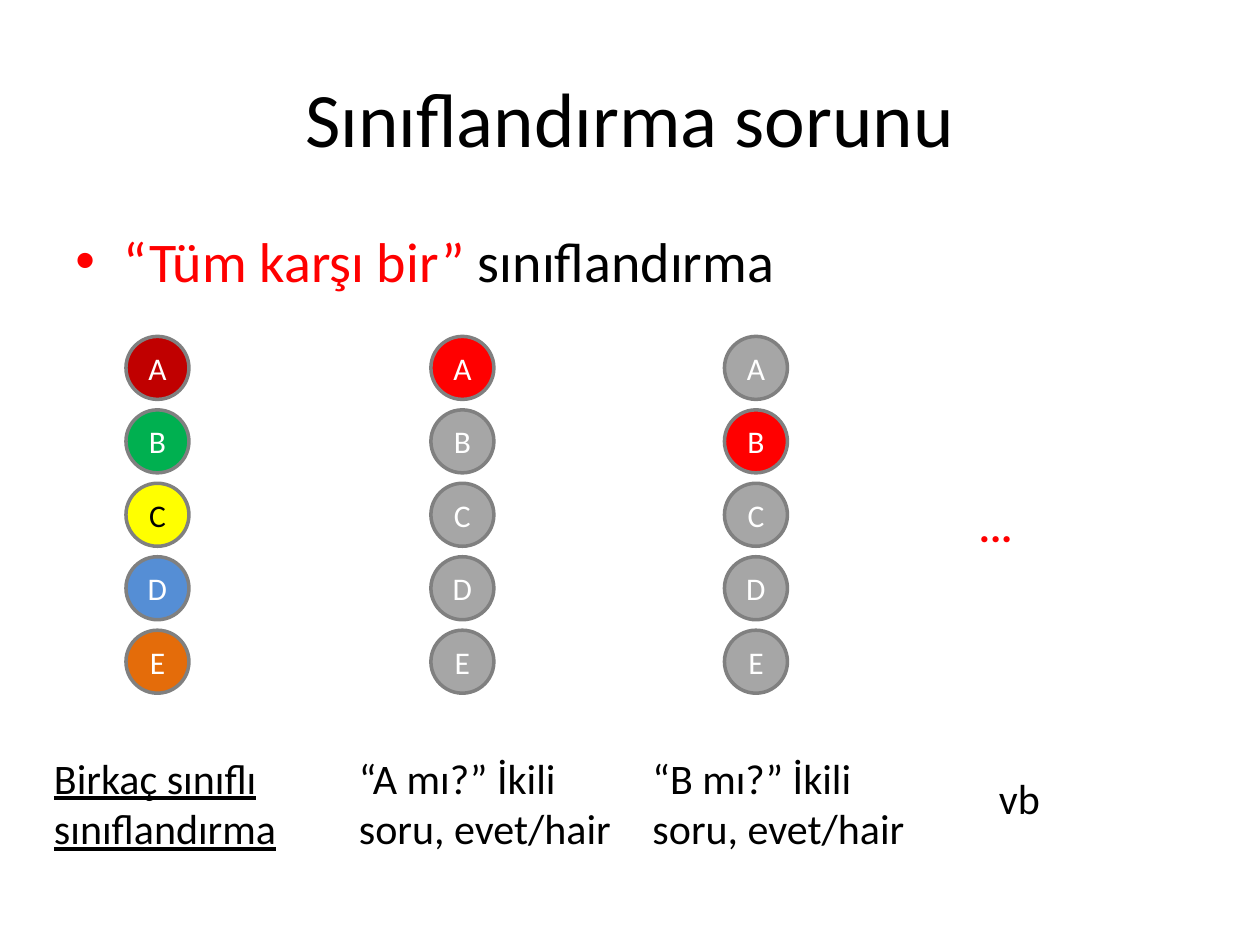
"""Build a slide showing one-versus-all classification."""
from lxml import etree
from pptx import Presentation
from pptx.dml.color import RGBColor
from pptx.enum.shapes import MSO_SHAPE
from pptx.enum.text import MSO_ANCHOR, PP_ALIGN
from pptx.oxml.ns import qn
from pptx.util import Inches, Pt

OVAL = MSO_SHAPE.OVAL
MIDDLE = MSO_ANCHOR.MIDDLE
CENTER = PP_ALIGN.CENTER

FONT = "Calibri"
BLACK = RGBColor(0x00, 0x00, 0x00)
WHITE = RGBColor(0xFF, 0xFF, 0xFF)
RED = RGBColor(0xFF, 0x00, 0x00)
DARK_RED = RGBColor(0xC0, 0x00, 0x00)
GREEN = RGBColor(0x00, 0xB0, 0x50)
YELLOW = RGBColor(0xFF, 0xFF, 0x00)
BLUE = RGBColor(0x55, 0x8E, 0xD5)
ORANGE = RGBColor(0xE4, 0x6C, 0x0A)
GRAY = RGBColor(0xA6, 0xA6, 0xA6)
OUTLINE = RGBColor(0x80, 0x80, 0x80)

TITLE = "Sınıflandırma sorunu"
TOPIC = [("“Tüm karşı bir” ", RED), ("sınıflandırma", BLACK)]
CLASSES = "ABCDE"
CLASS_COLORS = [DARK_RED, GREEN, YELLOW, BLUE, ORANGE]


def one_against_rest(chosen):
    return [RED if letter == chosen else GRAY for letter in CLASSES]


COLUMNS = [
    (1, CLASS_COLORS, "Birkaç sınıflı sınıflandırma", True),
    (3.42, one_against_rest("A"), "“A mı?” İkili soru, evet/hair", False),
    (5.75, one_against_rest("B"), "“B mı?” İkili soru, evet/hair", False),
]
CIRCLE = 0.5
FIRST_TOP = 2.67
PITCH = 0.583
LABEL_OFFSET = -0.67


def style(paragraph, size, color):
    paragraph.font.name = FONT
    paragraph.font.size = Pt(size)
    paragraph.font.color.rgb = color


def add_text(slide, box, text, size, color=BLACK):
    frame = slide.shapes.add_textbox(*map(Inches, box)).text_frame
    frame.word_wrap = True
    paragraph = frame.paragraphs[0]
    paragraph.text = text
    style(paragraph, size, color)
    return frame


def add_topic(slide):
    paragraph = add_text(slide, (0.5, 1.75, 9, 4.95), "", 32).paragraphs[0]
    for text, color in TOPIC:
        run = paragraph.add_run()
        run.text = text
        run.font.color.rgb = color
    properties = paragraph.font._element.getparent()
    properties.set("marL", str(Inches(0.38)))
    properties.set("indent", str(Inches(-0.38)))
    color = etree.Element(qn("a:buClr"))
    etree.SubElement(color, qn("a:srgbClr"), val=str(RED))
    font = etree.Element(qn("a:buFont"), typeface="Arial")
    bullet = etree.Element(qn("a:buChar"), char="•")
    for position, element in enumerate((color, font, bullet)):
        properties.insert(position, element)


def add_circle(slide, left, top, letter, fill):
    circle = slide.shapes.add_shape(
        OVAL, Inches(left), Inches(top), Inches(CIRCLE), Inches(CIRCLE))
    circle.shadow.inherit = False
    circle.fill.solid()
    circle.fill.fore_color.rgb = fill
    circle.line.color.rgb = OUTLINE
    circle.line.width = Pt(2)
    circle.text_frame.vertical_anchor = MIDDLE
    paragraph = circle.text_frame.paragraphs[0]
    paragraph.text = letter
    paragraph.alignment = CENTER
    style(paragraph, 18, BLACK if fill == YELLOW else WHITE)


def main():
    deck = Presentation()
    deck.slide_width, deck.slide_height = Inches(10), Inches(7.5)
    slide = deck.slides.add_slide(deck.slide_layouts[6])

    title = add_text(slide, (0.5, 0.3, 9, 1.25), TITLE, 44)
    title.vertical_anchor = MIDDLE
    title.paragraphs[0].alignment = CENTER
    add_topic(slide)

    for left, fills, caption, underlined in COLUMNS:
        for row, (letter, fill) in enumerate(zip(CLASSES, fills)):
            add_circle(slide, left, FIRST_TOP + row * PITCH, letter, fill)
        label = add_text(slide, (left + LABEL_OFFSET, 5.92, 2.25, 0.91), caption, 24)
        if underlined:
            label.paragraphs[0].font.underline = True

    dots = add_text(slide, (7.67, 3.92, 1.17, 0.5), "...", 24, RED)
    dots.paragraphs[0].font.bold = True
    add_text(slide, (7.83, 6.08, 1.5, 0.5), "vb", 24)
    deck.save("out.pptx")


if __name__ == "__main__":
    main()
